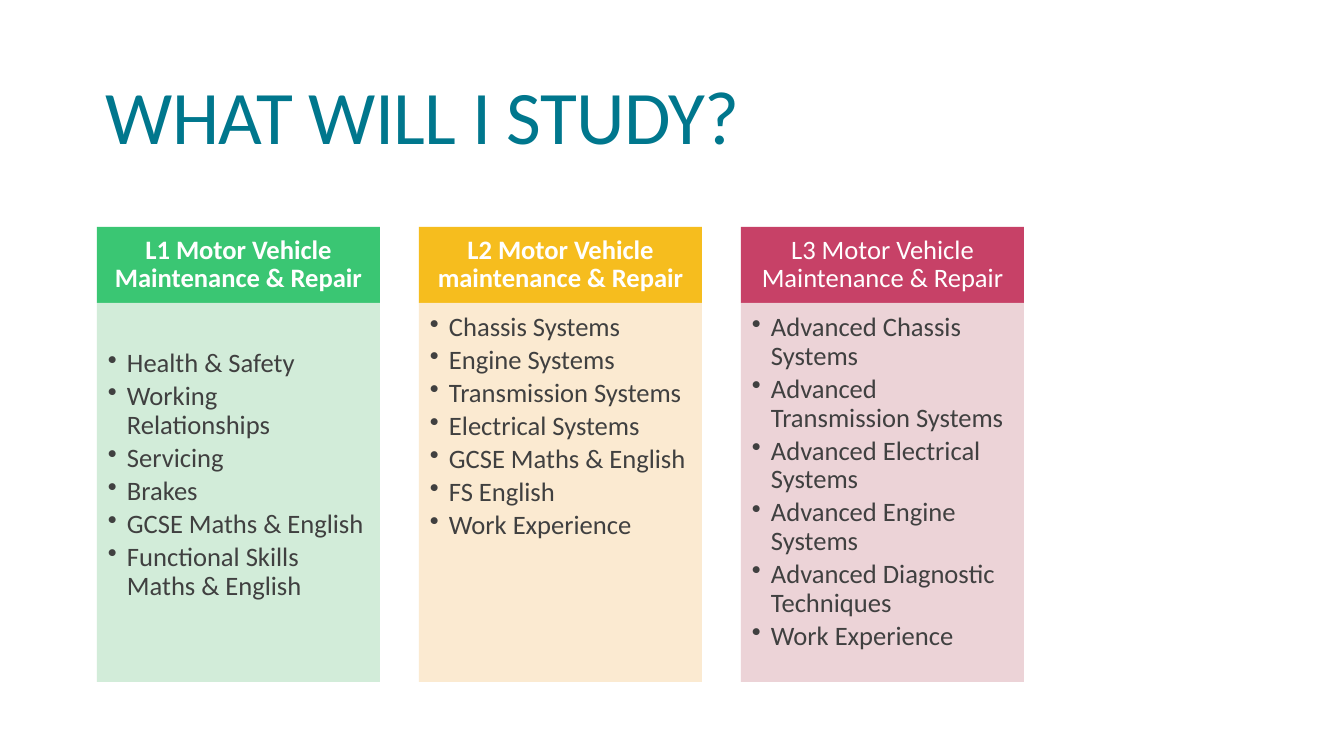
from lxml import etree
from pptx import Presentation
from pptx.dml.color import RGBColor
from pptx.enum.shapes import MSO_SHAPE
from pptx.enum.text import MSO_ANCHOR, MSO_AUTO_SIZE, PP_ALIGN
from pptx.oxml.ns import qn
from pptx.util import Pt

RECTANGLE = MSO_SHAPE.RECTANGLE
TOP, MIDDLE, BOTTOM = MSO_ANCHOR.TOP, MSO_ANCHOR.MIDDLE, MSO_ANCHOR.BOTTOM
LEFT, CENTER = PP_ALIGN.LEFT, PP_ALIGN.CENTER
NO_AUTOFIT = MSO_AUTO_SIZE.NONE

EMU_PER_PX = 914400 / 100.8
FONT = "Calibri"
TITLE_ONLY = 5
COURSE_LEFT, COURSE_TOP, COURSE_WIDTH, COURSE_PITCH = 97, 227, 283, 322
HEADING_HEIGHT, UNITS_HEIGHT = 76, 379
BULLET_INDENT = 19

# heading, heading is bold, heading colour, panel colour, list top inset, units
COURSES = [
    ("L1 Motor Vehicle Maintenance & Repair", True, "3AC673", "CEEAD5", 47,
     ["Health & Safety", "Working Relationships", "Servicing", "Brakes",
      "GCSE Maths & English", "Functional Skills Maths & English"]),
    ("L2 Motor Vehicle maintenance & Repair", True, "F6BD1E", "FBE8CD", 11,
     ["Chassis Systems", "Engine Systems", "Transmission Systems",
      "Electrical Systems", "GCSE Maths & English", "FS English",
      "Work Experience"]),
    ("L3 Motor Vehicle Maintenance & Repair", False, "C74167", "EBCFD3", 11,
     ["Advanced Chassis Systems", "Advanced Transmission Systems",
      "Advanced Electrical Systems", "Advanced Engine Systems",
      "Advanced Diagnostic Techniques", "Work Experience"]),
]


def px(length):
    return round(length * EMU_PER_PX)


def color(hex_code):
    return RGBColor.from_string(hex_code)


def add_bullet(paragraph):
    properties = paragraph._p.get_or_add_pPr()
    properties.set("marL", str(px(BULLET_INDENT)))
    properties.set("indent", str(-px(BULLET_INDENT)))
    etree.SubElement(properties, qn("a:buChar")).set("char", "•")


def write(shape, lines, *, size, ink, bold=False, align=LEFT, anchor=TOP,
          insets=(10, 5, 10, 5), line_spacing=0.9, space_after=0,
          bullets=False, tracking=0):
    """Fill a shape with one paragraph per line; insets run left, top, right, bottom."""
    frame = shape.text_frame
    frame.word_wrap = True
    frame.auto_size = NO_AUTOFIT
    frame.vertical_anchor = anchor
    (frame.margin_left, frame.margin_top,
     frame.margin_right, frame.margin_bottom) = map(px, insets)
    for index, line in enumerate(lines):
        paragraph = frame.add_paragraph() if index else frame.paragraphs[0]
        paragraph.alignment = align
        paragraph.line_spacing = line_spacing
        paragraph.space_after = Pt(space_after)
        if bullets:
            add_bullet(paragraph)
        run = paragraph.add_run()
        run.text = line
        run.font.name = FONT
        run.font.size = Pt(size)
        run.font.bold = bold
        run.font.color.rgb = color(ink)
        if tracking:
            run._r.get_or_add_rPr().set("spc", str(tracking))


def add_panel(slide, left, top, width, height, fill, opacity=100):
    panel = slide.shapes.add_shape(RECTANGLE, *map(px, (left, top, width, height)))
    panel.shadow.inherit = False
    panel.line.fill.background()
    panel.fill.solid()
    panel.fill.fore_color.rgb = color(fill)
    if opacity < 100:
        fill_color = panel._element.spPr.find(qn("a:solidFill"))[0]
        etree.SubElement(fill_color, qn("a:alpha")).set("val", str(opacity * 1000))
    return panel


def add_title(slide, text):
    title = slide.shapes.title
    title.left, title.top, title.width, title.height = map(px, (96, 47, 958, 118))
    write(title, [text], size=54, ink="00778D", anchor=BOTTOM,
          line_spacing=0.85, tracking=-50)


def add_course(slide, left, heading, bold, heading_fill, units_fill, list_inset, units):
    heading_panel = add_panel(slide, left, COURSE_TOP, COURSE_WIDTH,
                              HEADING_HEIGHT, heading_fill)
    write(heading_panel, [heading], size=19, ink="FFFFFF", bold=bold,
          align=CENTER, anchor=MIDDLE, insets=(15, 8, 15, 8))
    units_panel = add_panel(slide, left, COURSE_TOP + HEADING_HEIGHT, COURSE_WIDTH,
                            UNITS_HEIGHT, units_fill, opacity=90)
    write(units_panel, units, size=19, ink="404040",
          insets=(11, list_inset, 15, 17), space_after=3, bullets=True)


def main():
    presentation = Presentation()
    presentation.slide_width, presentation.slide_height = px(1344), px(756)
    slide = presentation.slides.add_slide(presentation.slide_layouts[TITLE_ONLY])
    add_title(slide, "WHAT WILL I STUDY?")
    for index, course in enumerate(COURSES):
        add_course(slide, COURSE_LEFT + index * COURSE_PITCH, *course)
    presentation.save("out.pptx")


if __name__ == "__main__":
    main()
